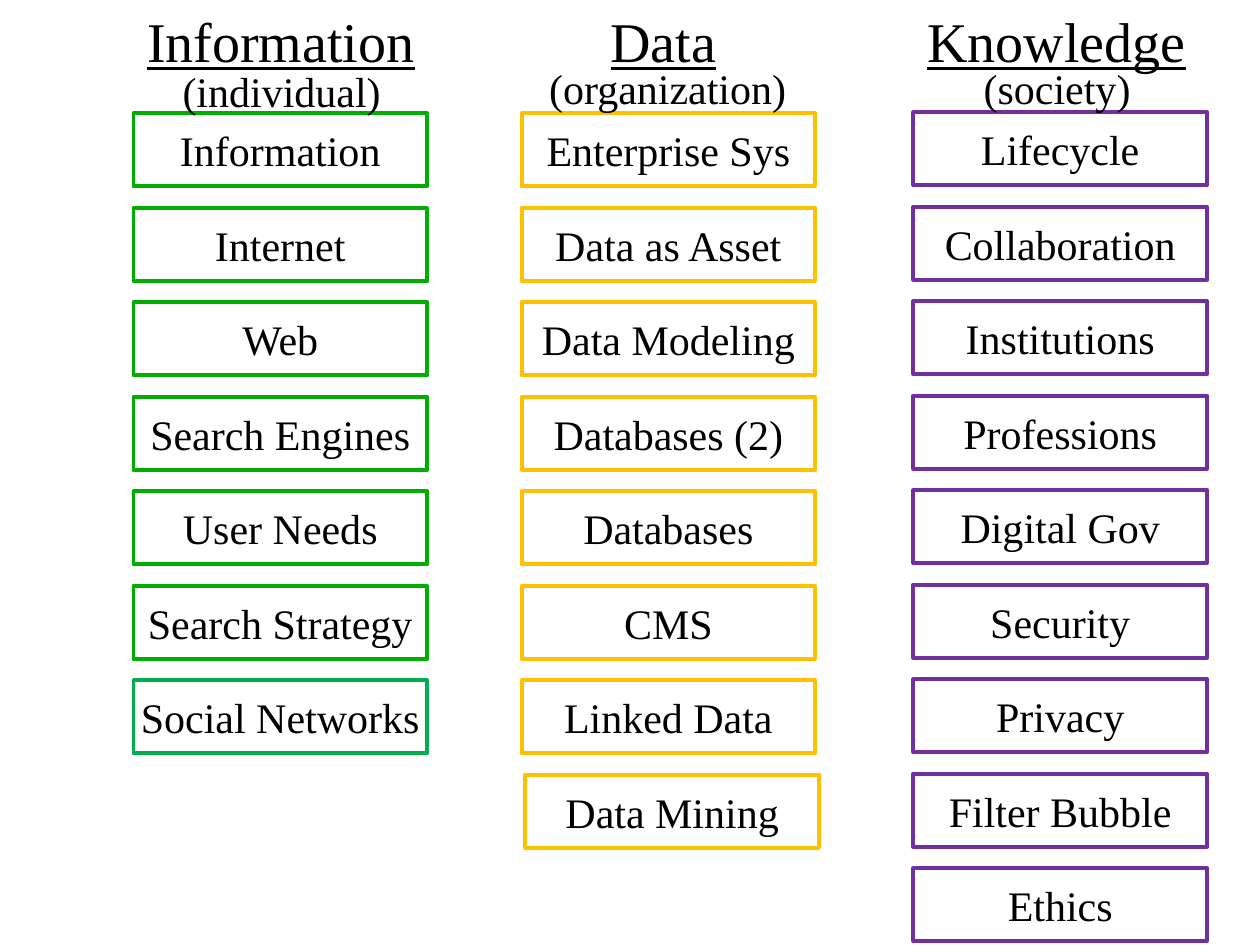
"""Build a slide listing course topics under information, data and knowledge."""
from pptx import Presentation
from pptx.dml.color import RGBColor
from pptx.enum.shapes import MSO_SHAPE
from pptx.enum.text import MSO_ANCHOR, PP_ALIGN
from pptx.util import Inches, Pt

RECTANGLE = MSO_SHAPE.RECTANGLE
MIDDLE = MSO_ANCHOR.MIDDLE
CENTER = PP_ALIGN.CENTER

BOX_WIDTH, BOX_HEIGHT, ROW_PITCH = 2.33, 0.58, 0.75
HEADING_HEIGHT, CAPTION_HEIGHT = 0.64, 0.5

COLUMNS = [
    {"left": 1.06, "top": 0.9, "color": "00AE00",
     "heading": ("Information", 1.06, 2.34),
     "caption": ("(individual)", 1.34, 0.47, 1.79),
     "topics": ["Information", "Internet", "Web", "Search Engines",
                "User Needs", "Search Strategy", "Social Networks"]},
    {"left": 4.14, "top": 0.9, "color": "FFC000",
     "heading": ("Data", 4.74, 1.05),
     "caption": ("(organization)", 4.25, 0.45, 2.1),
     "topics": ["Enterprise Sys", "Data as Asset", "Data Modeling", "Databases (2)",
                "Databases", "CMS", "Linked Data", "Data Mining"]},
    {"left": 7.25, "top": 0.89, "color": "7030A0",
     "heading": ("Knowledge", 7.25, 2.27),
     "caption": ("(society)", 7.7, 0.45, 1.38),
     "topics": ["Lifecycle", "Collaboration", "Institutions", "Professions",
                "Digital Gov", "Security", "Privacy", "Filter Bubble", "Ethics"]},
]
TOPIC_COLORS = {"Social Networks": "00B050"}
TOPIC_SHIFTS = {"Data Mining": 0.03}


def rgb(color):
    return RGBColor.from_string(color)


def write(shape, text, size, underline=None):
    text_frame = shape.text_frame
    text_frame.text = text
    text_frame.word_wrap = False
    paragraph = text_frame.paragraphs[0]
    paragraph.alignment = CENTER
    font = paragraph.runs[0].font
    font.name = "Times New Roman"
    font.size = Pt(size)
    font.underline = underline
    font.color.rgb = rgb("000000")


presentation = Presentation()
presentation.slide_width = Inches(10)
presentation.slide_height = Inches(7.5)
slide = presentation.slides.add_slide(presentation.slide_layouts[6])

for column in COLUMNS:
    group = slide.shapes.add_group_shape()
    for row, topic in enumerate(column["topics"]):
        left = column["left"] + TOPIC_SHIFTS.get(topic, 0)
        top = column["top"] + row * ROW_PITCH
        box = group.shapes.add_shape(
            RECTANGLE, Inches(left), Inches(top), Inches(BOX_WIDTH), Inches(BOX_HEIGHT))
        box.shadow.inherit = False
        box.fill.background()
        box.line.color.rgb = rgb(TOPIC_COLORS.get(topic, column["color"]))
        box.line.width = Pt(2.25)
        box.text_frame.vertical_anchor = MIDDLE
        write(box, topic, 24)

    text, left, width = column["heading"]
    heading = group.shapes.add_textbox(
        Inches(left), 0, Inches(width), Inches(HEADING_HEIGHT))
    write(heading, text, 32, underline=True)

captions = slide.shapes.add_group_shape()
for column in COLUMNS:
    text, left, top, width = column["caption"]
    caption = captions.shapes.add_textbox(
        Inches(left), Inches(top), Inches(width), Inches(CAPTION_HEIGHT))
    write(caption, text, 24)

presentation.save("out.pptx")
